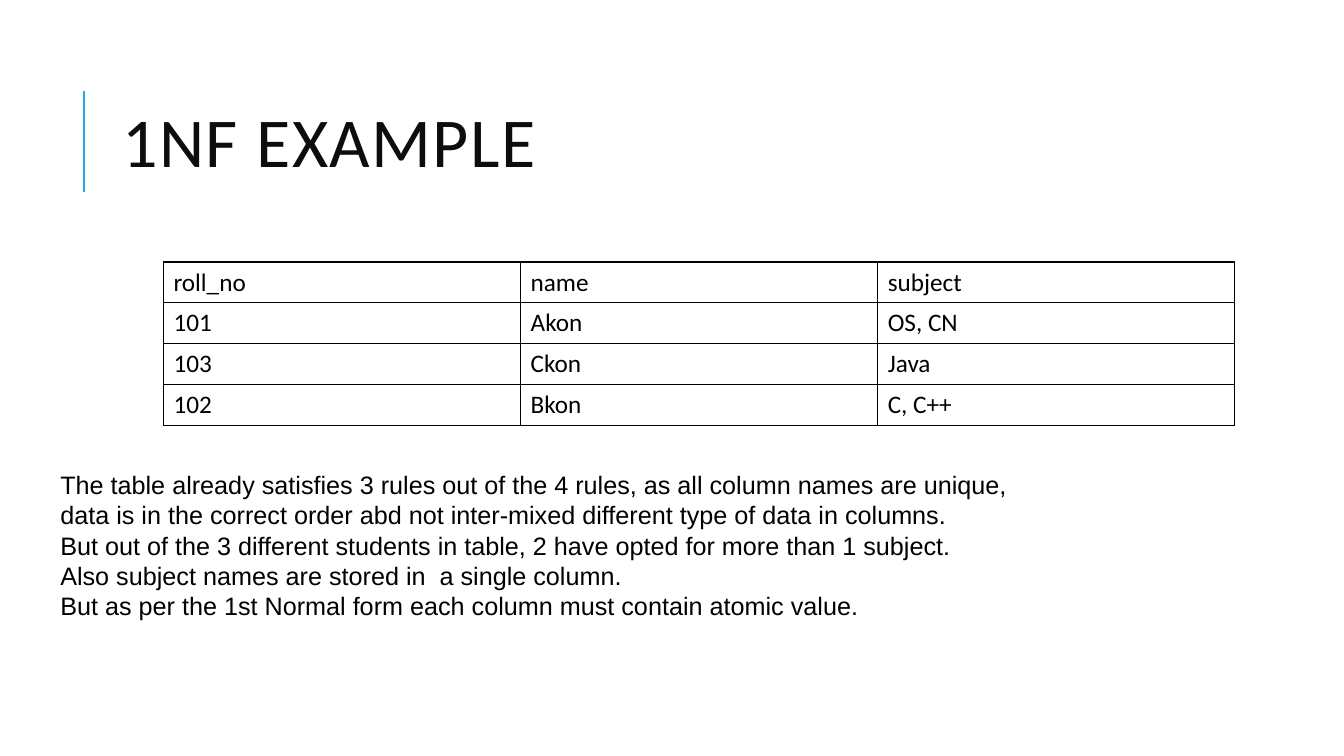
from pptx import Presentation
from pptx.dml.color import RGBColor
from pptx.enum.shapes import MSO_CONNECTOR as Link
from pptx.enum.text import MSO_ANCHOR as Anchor
from pptx.oxml import parse_xml
from pptx.oxml.ns import nsdecls
from pptx.util import Cm, Pt

BLACK = RGBColor(0x00, 0x00, 0x00)
DARK = RGBColor(0x0D, 0x0D, 0x0D)
BLUE = RGBColor(0x1C, 0xAD, 0xE4)

TITLE = {"name": "Calibri", "size": Pt(50)}
CELL = {"name": "Calibri", "size": Pt(18)}
BODY = {"name": "Arial", "size": Pt(18)}


def style(para, form, color):
    for run in para.runs:
        for key, value in form.items():
            setattr(run.font, key, value)
        run.font.color.rgb = color


def add_text(box, lines, form, color):
    shape = slide.shapes.add_textbox(*map(Cm, box))
    frame = shape.text_frame
    frame.word_wrap = True
    frame.vertical_anchor = Anchor.MIDDLE
    frame.text = "\n".join(lines)
    for para in frame.paragraphs:
        style(para, form, color)
    return frame


deck = Presentation()
deck.slide_width, deck.slide_height = Cm(33.87), Cm(19.05)
slide = deck.slides.add_slide(deck.slide_layouts[6])

# Accent line beside the title
rule = slide.shapes.add_connector(
    Link.STRAIGHT, Cm(2.12), Cm(4.83), Cm(2.12), Cm(2.29))
rule.line.color.rgb = BLUE
rule.line.width = Pt(1.5)
rule._element.spPr.append(parse_xml(f"<a:effectLst {nsdecls('a')}/>"))

# Title
head = add_text((2.84, 1.63, 27, 4.17), ["1NF EXAMPLE"], TITLE, DARK)
para = head.paragraphs[0]
para.line_spacing = 0.8
para.runs[0].font._element.set("spc", "100")

# Student table
rows = [
    ("roll_no", "name", "subject"),
    ("101", "Akon", "OS, CN"),
    ("103", "Ckon", "Java"),
    ("102", "Bkon", "C, C++"),
]
table = slide.shapes.add_table(
    len(rows), 3, Cm(4.12), Cm(6.6), Cm(27), Cm(4.12)).table
table.first_row = table.horz_banding = False
for r, row in enumerate(rows):
    for c, word in enumerate(row):
        cell = table.cell(r, c)
        cell.text = word
        cell.vertical_anchor = Anchor.MIDDLE
        style(cell.text_frame.paragraphs[0], CELL, BLACK)
        cell.fill.background()
        props = cell._tc.get_or_add_tcPr()
        for i, side in enumerate(("lnL", "lnR", "lnT", "lnB")):
            props.insert(i, parse_xml(
                f'<a:{side} {nsdecls("a")} w="{Pt(1)}"><a:solidFill>'
                f'<a:srgbClr val="{BLACK}"/></a:solidFill></a:{side}>'))

# Explanation below the table, \v breaks a line inside a paragraph
notes = [
    "The table already satisfies 3 rules out of the 4 rules, as all column names are unique,\v"
    "data is in the correct order abd not inter-mixed different type of data in columns.",
    "But out of the 3 different students in table, 2 have opted for more than 1 subject.\v"
    "Also subject names are stored in  a single column.",
    "But as per the 1st Normal form each column must contain atomic value.",
]
add_text((1.27, 11.68, 24.77, 4.11), notes, BODY, BLACK)

deck.save("out.pptx")
